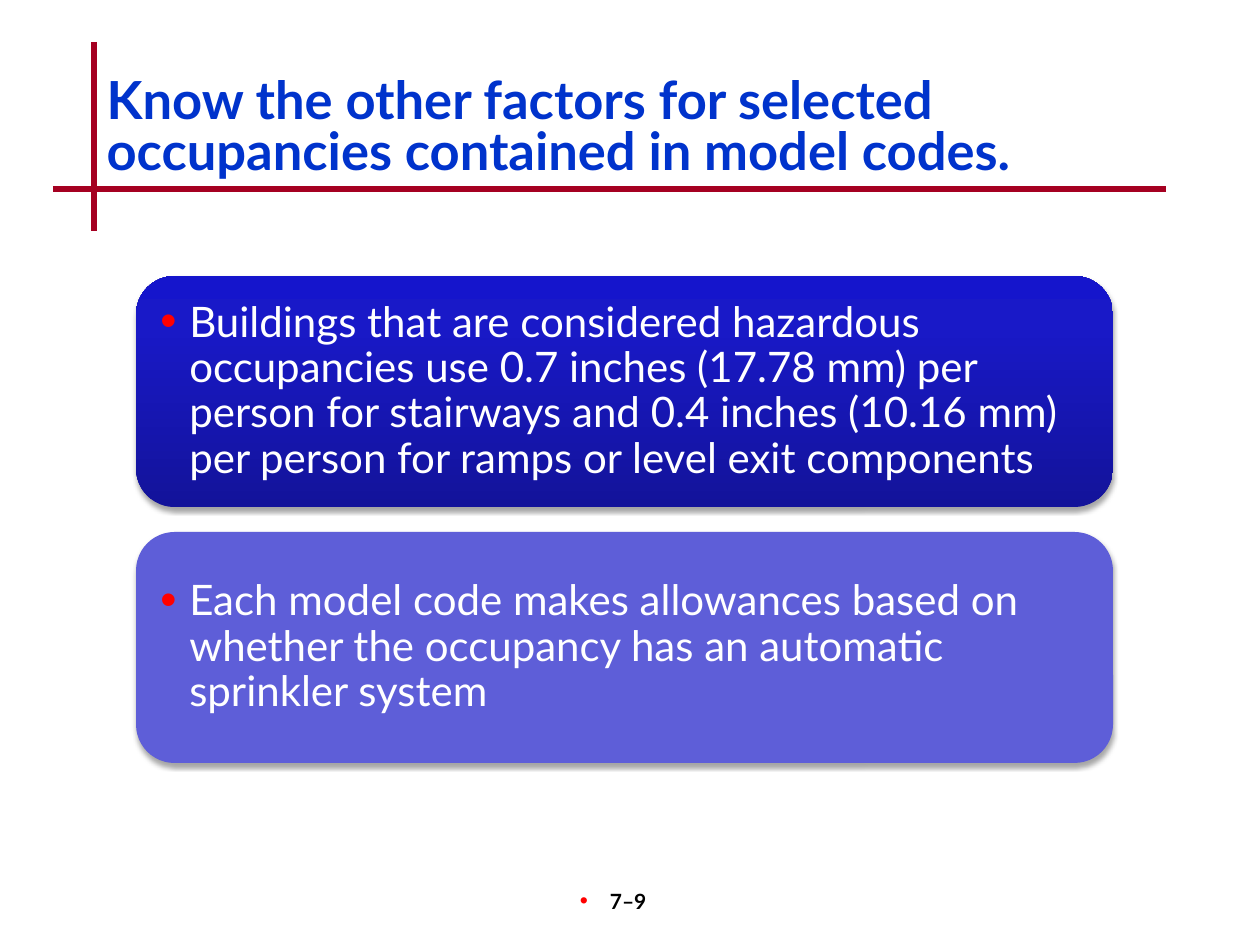
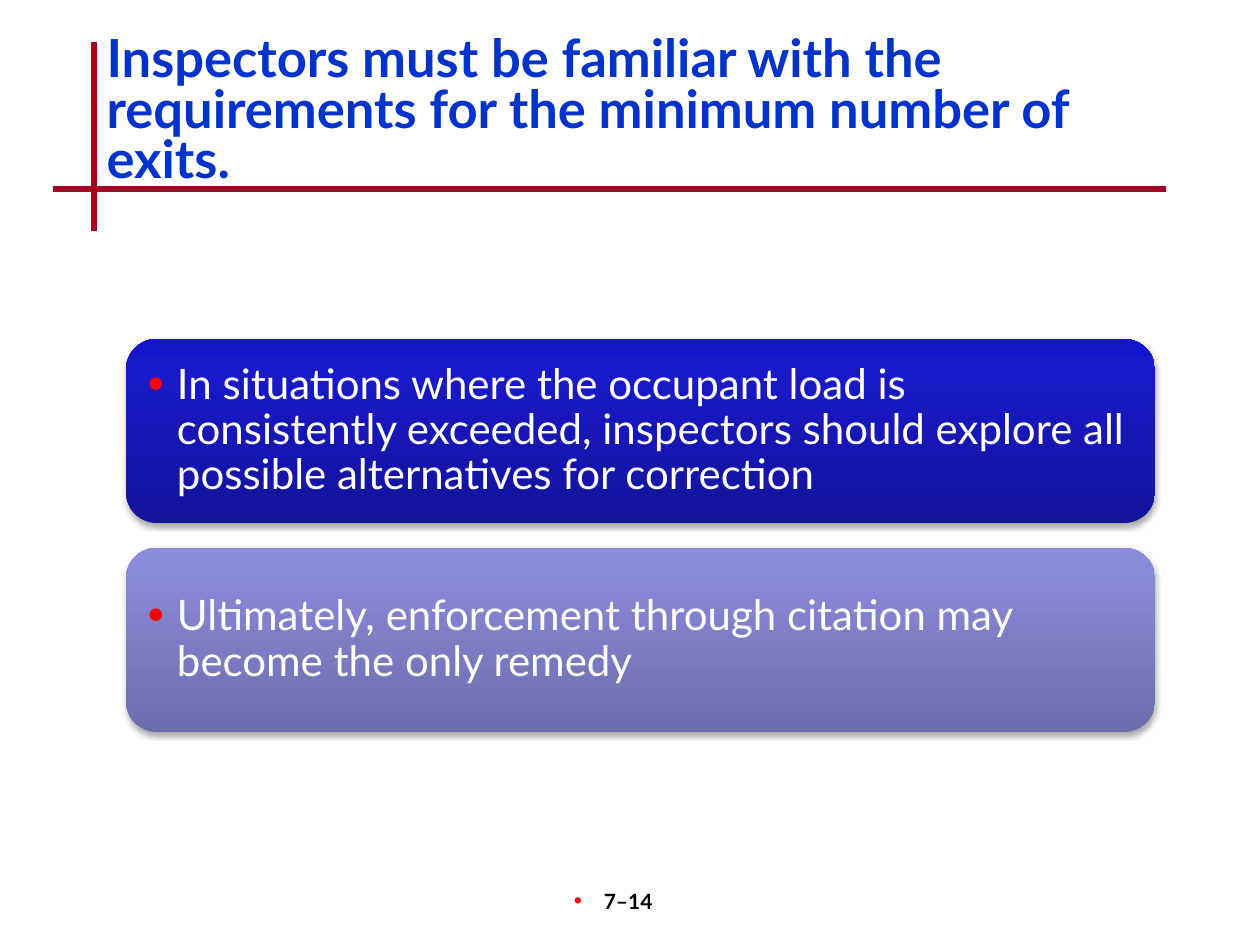
"""Build two slides on exit rules from building codes."""
from lxml.etree import SubElement as Sub
from pptx import Presentation
from pptx.dml.color import RGBColor as RGB
from pptx.enum.shapes import MSO_CONNECTOR as Link, MSO_SHAPE as Form
from pptx.enum.text import MSO_ANCHOR as Anchor, MSO_AUTO_SIZE as Fit, PP_ALIGN as Align
from pptx.oxml.ns import qn
from pptx.util import Emu, Pt

RULE = RGB(0xA5, 0x00, 0x21)
HEAD = RGB(0x00, 0x33, 0xCC)
BLACK = RGB(0x00, 0x00, 0x00)
WHITE = RGB(0xFF, 0xFF, 0xFF)
RED = RGB(0xFF, 0x00, 0x00)
PLAIN = RGB(0x5E, 0x5E, 0xD8)
DEEP = [(0, RGB(0x13, 0x13, 0x9A)), (80, RGB(0x19, 0x19, 0xC8)), (100, RGB(0x15, 0x15, 0xCC))]
PALE = [(0, RGB(0x6D, 0x6D, 0xAC)), (100, RGB(0x8D, 0x8D, 0xE0))]

FONT = "Lato"
GAP = 25
HANG = 29
RULES = [(94, 42, 94, 231), (53, 189, 1166, 189)]

SLIDES = [
    {
        "title": "Know the other factors for selected occupancies contained in model codes.",
        "top": 73,
        "page": "7–9",
        "first": (136, 276, 977, 231),
        "cards": [
            ("Buildings that are considered hazardous occupancies use 0.7 inches (17.78 mm) "
             "per person for stairways and 0.4 inches (10.16 mm) per person for ramps or "
             "level exit components", DEEP),
            ("Each model code makes allowances based on whether the occupancy has an "
             "automatic sprinkler system", PLAIN),
        ],
    },
    {
        "title": "Inspectors must be familiar with the requirements for the minimum number of exits.",
        "top": 31,
        "page": "7–14",
        "first": (126, 339, 1029, 184),
        "cards": [
            ("In situations where the occupant load is consistently exceeded, inspectors "
             "should explore all possible alternatives for correction", DEEP),
            ("Ultimately, enforcement through citation may become the only remedy", PALE),
        ],
    },
]


def px(*sizes):
    return [Emu(round(size * 914400 / 126)) for size in sizes]


def write(frame, text, size, color, bold=False, align=Align.LEFT, space=1.0, hang=0):
    frame.word_wrap = True
    frame.auto_size = Fit.NONE
    para = frame.paragraphs[0]
    para.text = text
    para.alignment = align
    para.line_spacing = space
    if hang:
        props = para._p.get_or_add_pPr()
        inset = px(hang)[0]
        props.set("marL", str(inset))
        props.set("indent", str(-inset))
        Sub(Sub(props, qn("a:buClr")), qn("a:srgbClr"), val=str(RED))
        Sub(props, qn("a:buSzPct"), val="110000")
        Sub(props, qn("a:buFont"), typeface="Arial")
        Sub(props, qn("a:buChar"), char="•")
    font = para.font
    font.name, font.size, font.bold = FONT, Pt(size), bold
    font.color.rgb = color


def paint(shape, fill):
    if isinstance(fill, RGB):
        shape.fill.solid()
        shape.fill.fore_color.rgb = fill
        return
    shape.fill.gradient()
    shape.fill.gradient_angle = 90
    stops = shape._element.spPr.find(".//" + qn("a:gsLst"))
    stops.clear()
    for spot, color in fill:
        stop = Sub(stops, qn("a:gs"), pos=str(spot * 1000))
        Sub(stop, qn("a:srgbClr"), val=str(color))


def shade(shape):
    shape.shadow.inherit = False
    effects = shape._element.spPr.find(qn("a:effectLst"))
    shadow = Sub(effects, qn("a:outerShdw"), blurRad=str(Pt(3.1)), dist=str(Pt(1.8)),
                 dir="5400000", rotWithShape="0")
    color = Sub(shadow, qn("a:srgbClr"), val=str(BLACK))
    Sub(color, qn("a:alpha"), val="35000")


def add_card(slide, box, text, fill):
    card = slide.shapes.add_shape(Form.ROUNDED_RECTANGLE, *px(*box))
    paint(card, fill)
    card.line.fill.background()
    shade(card)
    frame = card.text_frame
    frame.vertical_anchor = Anchor.MIDDLE
    frame.margin_left = frame.margin_right = frame.margin_top = frame.margin_bottom = px(13)[0]
    write(frame, text, 24, WHITE, space=0.9, hang=HANG)


def add_frame(slide, title, top, page):
    for ends in RULES:
        line = slide.shapes.add_connector(Link.STRAIGHT, *px(*ends))
        line.line.color.rgb = RULE
        line.line.width = Pt(3)
        Sub(line._element.spPr, qn("a:effectLst"))
    head = slide.shapes.title
    head.left, head.top, head.width, head.height = px(94, top, 1071, 147)
    head.text_frame.vertical_anchor = Anchor.TOP
    write(head.text_frame, title, 30, HEAD, bold=True, space=0.8)
    foot = slide.shapes.add_textbox(*px(494, 882, 262, 63)).text_frame
    foot.margin_right = px(36)[0]
    write(foot, page, 12, BLACK, bold=True, align=Align.CENTER, hang=30)


def main():
    deck = Presentation()
    deck.slide_width, deck.slide_height = px(1260, 945)
    for data in SLIDES:
        slide = deck.slides.add_slide(deck.slide_layouts[5])
        add_frame(slide, data["title"], data["top"], data["page"])
        left, top, width, height = data["first"]
        for row, (text, fill) in enumerate(data["cards"]):
            add_card(slide, (left, top + row * (height + GAP), width, height), text, fill)
    deck.save("out.pptx")


if __name__ == "__main__":
    main()
